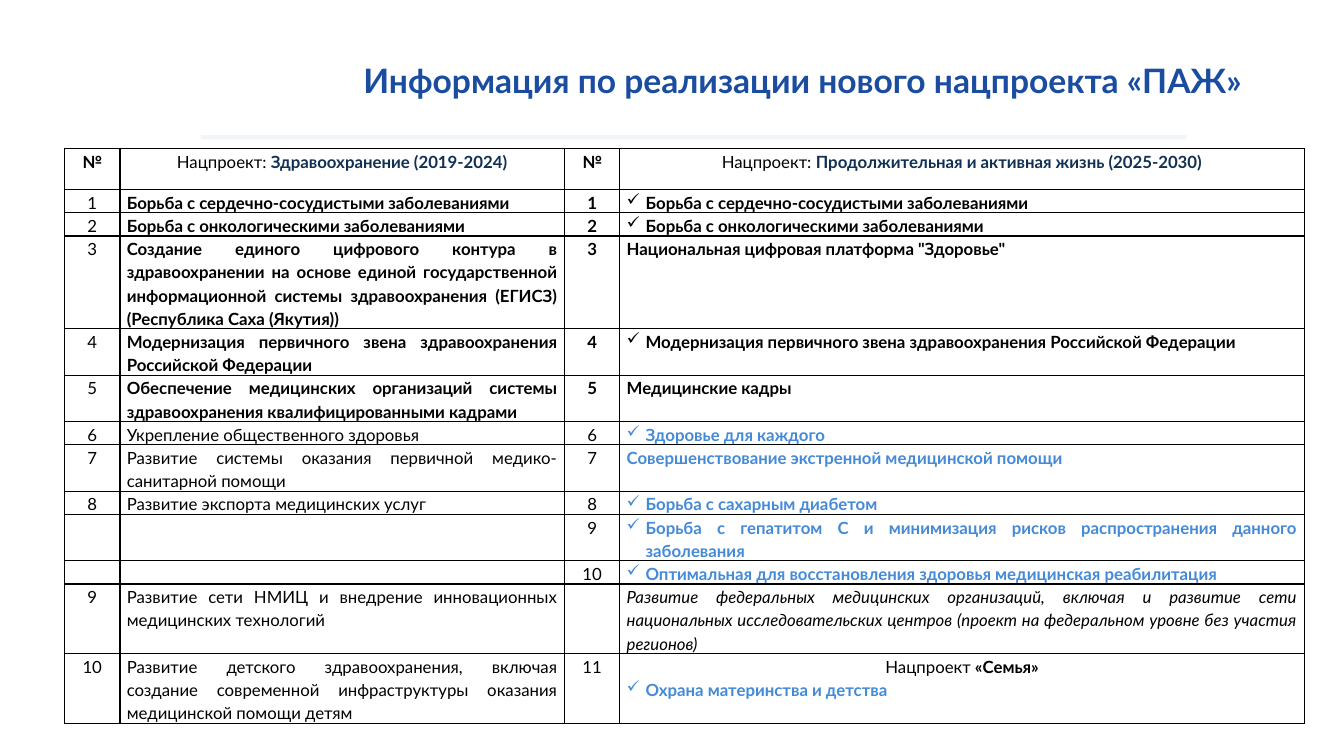
from dataclasses import dataclass

from lxml import etree
from pptx import Presentation
from pptx.dml.color import RGBColor
from pptx.enum.shapes import MSO_CONNECTOR
from pptx.enum.text import MSO_ANCHOR, PP_ALIGN
from pptx.oxml.ns import qn
from pptx.util import Pt

LEFT, CENTER, RIGHT, JUSTIFY = PP_ALIGN.LEFT, PP_ALIGN.CENTER, PP_ALIGN.RIGHT, PP_ALIGN.JUSTIFY
TOP = MSO_ANCHOR.TOP
STRAIGHT = MSO_CONNECTOR.STRAIGHT


@dataclass(frozen=True)
class Theme:
    font: str = "Lato"
    title_size: int = 24
    table_size: int = 12
    title: str = "1A4DA0"
    heading: str = "113052"
    text: str = "000000"
    new_project: str = "448AD7"
    border: str = "000000"


theme = Theme()


def write(paragraph, text, align=JUSTIFY, color=theme.text, size=theme.table_size,
          bold=False, italic=False, check=False, spacing=1.15):
    """Append a run to the paragraph; check puts a tick bullet before it."""
    paragraph.alignment = align
    paragraph.line_spacing = spacing
    if check:
        properties = paragraph._p.get_or_add_pPr()
        properties.set("marL", str(Pt(13.5)))
        properties.set("indent", str(-Pt(13.5)))
        etree.SubElement(properties, qn("a:buChar"), char="✓")
    run = paragraph.add_run()
    run.text = text
    run.font.name = theme.font
    run.font.size = Pt(size)
    run.font.bold = bold
    run.font.italic = italic
    run.font.color.rgb = RGBColor.from_string(color)


def draw_borders(cell):
    properties = cell._tc.get_or_add_tcPr()
    for index, side in enumerate(("lnL", "lnR", "lnT", "lnB")):
        line = etree.Element(qn(f"a:{side}"), w=str(Pt(1)))
        fill = etree.SubElement(line, qn("a:solidFill"))
        etree.SubElement(fill, qn("a:srgbClr"), val=theme.border)
        properties.insert(index, line)


presentation = Presentation()
presentation.slide_width, presentation.slide_height = Pt(960), Pt(540)
slide = presentation.slides.add_slide(presentation.slide_layouts[6])

# Pale rule under the title
rule = slide.shapes.add_connector(STRAIGHT, Pt(143.3), Pt(98), Pt(847.4), Pt(98))
rule.line.width = Pt(3)
rule.line.color.rgb = RGBColor.from_string(theme.title)
rule_color = rule.line._ln.find(".//" + qn("a:srgbClr"))
etree.SubElement(rule_color, qn("a:alpha"), val="6000")
etree.SubElement(rule._element.spPr, qn("a:effectLst"))

title = slide.shapes.add_textbox(Pt(97.2), Pt(42.5), Pt(797), Pt(36))
title.text_frame.word_wrap = True
title.text_frame.vertical_anchor = TOP
write(title.text_frame.paragraphs[0], "Информация по реализации нового нацпроекта «ПАЖ»",
      align=RIGHT, color=theme.title, size=theme.title_size, bold=True, spacing=0.9)

# Formats of the project names
plain = {}
bold = {"bold": True}
bold_check = {"bold": True, "check": True}
new = {"bold": True, "color": theme.new_project}
new_check = {**new, "check": True}
italic = {"italic": True}

# Text lines, old number, old project, its format, new number, new project, its format
projects = [
    (1, "1", "Борьба с сердечно-сосудистыми заболеваниями", bold,
     "1", "Борьба с сердечно-сосудистыми заболеваниями", bold_check),
    (1, "2", "Борьба с онкологическими заболеваниями", bold,
     "2", "Борьба с онкологическими заболеваниями", bold_check),
    (4, "3", "Создание единого цифрового контура в здравоохранении на основе единой "
     "государственной информационной системы здравоохранения (ЕГИСЗ) "
     "(Республика Саха (Якутия))", bold,
     "3", "Национальная цифровая платформа \"Здоровье\"", bold),
    (2, "4", "Модернизация первичного звена здравоохранения Российской Федерации", bold,
     "4", "Модернизация первичного звена здравоохранения Российской Федерации", bold_check),
    (2, "5", "Обеспечение медицинских организаций системы здравоохранения "
     "квалифицированными кадрами", bold,
     "5", "Медицинские кадры", bold),
    (1, "6", "Укрепление общественного здоровья", plain,
     "6", "Здоровье для каждого", new_check),
    (2, "7", "Развитие системы оказания первичной медико-санитарной помощи", plain,
     "7", "Совершенствование экстренной медицинской помощи", new),
    (1, "8", "Развитие экспорта медицинских услуг", plain,
     "8", "Борьба с сахарным диабетом", new_check),
    (2, "", "", plain,
     "9", "Борьба с гепатитом С и минимизация рисков распространения данного заболевания",
     new_check),
    (1, "", "", plain,
     "10", "Оптимальная для восстановления здоровья медицинская реабилитация", new_check),
    (3, "9", "Развитие сети НМИЦ и внедрение инновационных медицинских технологий", plain,
     "", "Развитие федеральных медицинских организаций, включая и развитие сети "
     "национальных исследовательских центров (проект на федеральном уровне без участия "
     "регионов)", italic),
    (3, "10", "Развитие детского здравоохранения, включая создание современной "
     "инфраструктуры оказания медицинской помощи детям", plain,
     "11", "Охрана материнства и детства", new_check),
]
header_height, line_height = 29.5, 16.56
column_widths = (39.6, 317.5, 39.6, 488.9)
row_heights = [header_height] + [project[0] * line_height for project in projects]

table_frame = slide.shapes.add_table(len(row_heights), len(column_widths), Pt(46.1), Pt(106),
                                     Pt(sum(column_widths)), Pt(sum(row_heights)))
table = table_frame.table
table.first_row = table.horz_banding = False
for column, width in zip(table.columns, column_widths):
    column.width = Pt(width)
for row, height in zip(table.rows, row_heights):
    row.height = Pt(height)
for cell in table.iter_cells():
    cell.margin_left = cell.margin_right = Pt(4.9)
    cell.margin_top = cell.margin_bottom = 0
    cell.fill.background()
    draw_borders(cell)

for column, project_name in ((0, "Здравоохранение (2019-2024)"),
                             (2, "Продолжительная и активная жизнь (2025-2030)")):
    write(table.cell(0, column).text_frame.paragraphs[0], "№", align=CENTER, bold=True)
    heading = table.cell(0, column + 1).text_frame.paragraphs[0]
    write(heading, "Нацпроект: ", align=CENTER)
    write(heading, project_name, align=CENTER, bold=True, color=theme.heading)

for row, project in enumerate(projects, start=1):
    lines, old_number, old_name, old_format, new_number, new_name, new_format = project
    number_format = {"align": CENTER}
    contents = (
        (old_number, number_format),
        (old_name, old_format),
        (new_number, {**number_format, "bold": row <= 5}),
        (new_name, new_format),
    )
    for column, (text, text_format) in enumerate(contents):
        text_frame = table.cell(row, column).text_frame
        paragraph = text_frame.paragraphs[0]
        if not text:
            # An empty cell takes its line height from the paragraph end mark
            etree.SubElement(paragraph._p, qn("a:endParaRPr"), sz=str(theme.table_size * 100))
            continue
        if new_number == "11" and column == 3:
            write(paragraph, "Нацпроект", align=CENTER)
            write(paragraph, " «Семья»", align=CENTER, bold=True)
            paragraph = text_frame.add_paragraph()
        write(paragraph, text, **text_format)

presentation.save("out.pptx")
